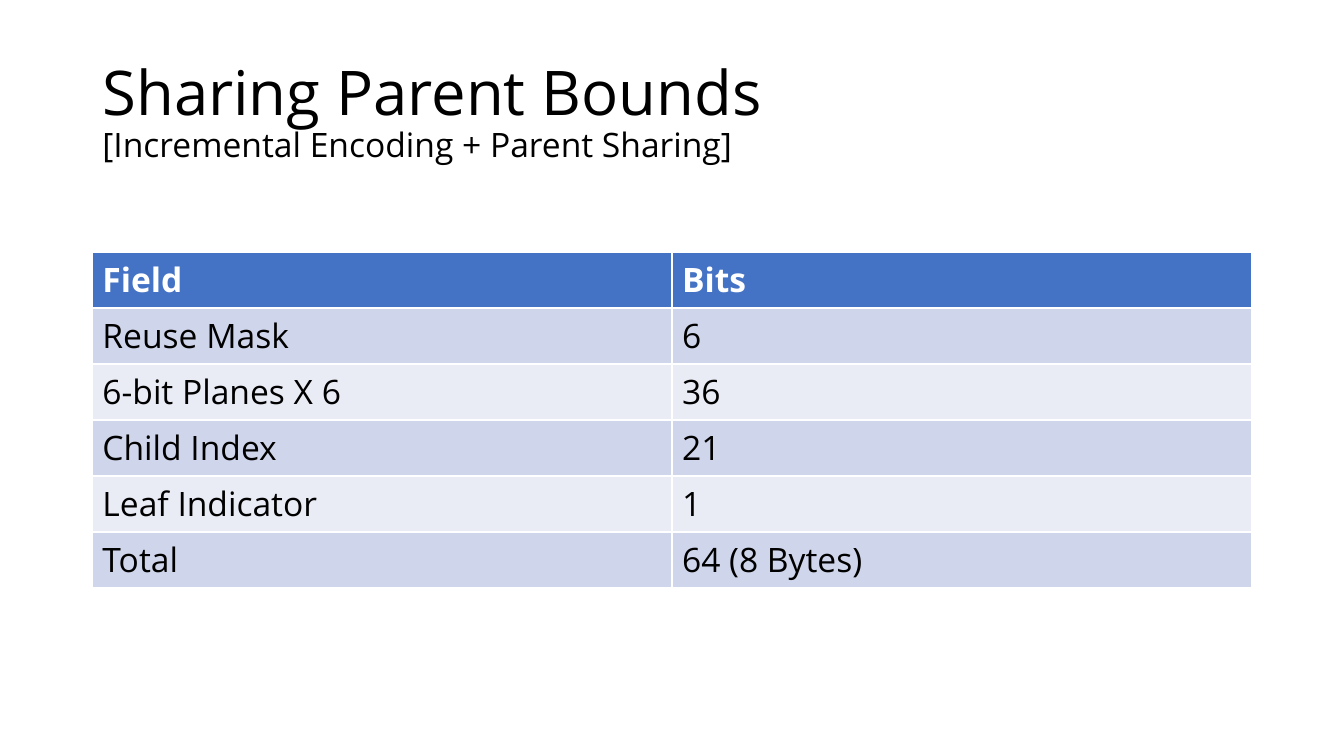
from pptx import Presentation
from pptx.dml.color import RGBColor
from pptx.enum.text import MSO_ANCHOR, PP_ALIGN
from pptx.util import Pt

LEFT = PP_ALIGN.LEFT
MIDDLE = MSO_ANCHOR.MIDDLE
BLACK = RGBColor(0x00, 0x00, 0x00)
WHITE = RGBColor(0xFF, 0xFF, 0xFF)
HEADER_BLUE = RGBColor(0x44, 0x72, 0xC4)
BAND_DARK = RGBColor(0xCF, 0xD5, 0xEA)
BAND_LIGHT = RGBColor(0xE9, 0xEB, 0xF5)

FIELDS = [
    ("Field", "Bits"),
    ("Reuse Mask", "6"),
    ("6-bit Planes X 6", "36"),
    ("Child Index", "21"),
    ("Leaf Indicator", "1"),
    ("Total", "64 (8 Bytes)"),
]
MARGIN = 66
CONTENT_WIDTH = 828
ROW_HEIGHT = 40


def add_text(paragraph, text, size=24, color=BLACK, bold=False):
    run = paragraph.add_run()
    run.text = text
    run.font.name = "Open Sans"
    run.font.size = Pt(size)
    run.font.color.rgb = color
    run.font.bold = bold


presentation = Presentation()
presentation.slide_width = Pt(960)
presentation.slide_height = Pt(540)
slide = presentation.slides.add_slide(presentation.slide_layouts[5])

title = slide.shapes.title
title.left, title.top = Pt(MARGIN), Pt(28.75)
title.width, title.height = Pt(CONTENT_WIDTH), Pt(104.4)
title.text_frame.vertical_anchor = MIDDLE
heading = title.text_frame.paragraphs[0]
heading.alignment = LEFT
heading.line_spacing = 0.9
add_text(heading, "Sharing Parent Bounds", size=44)
heading.add_line_break()
add_text(heading, "[Incremental Encoding + Parent Sharing]")

table = slide.shapes.add_table(
    len(FIELDS), 2, Pt(MARGIN), Pt(180), Pt(CONTENT_WIDTH), Pt(ROW_HEIGHT * len(FIELDS))
).table
for row_index, values in enumerate(FIELDS):
    is_header = row_index == 0
    band = BAND_DARK if row_index % 2 else BAND_LIGHT
    for column_index, value in enumerate(values):
        cell = table.cell(row_index, column_index)
        cell.fill.solid()
        cell.fill.fore_color.rgb = HEADER_BLUE if is_header else band
        add_text(
            cell.text_frame.paragraphs[0],
            value,
            color=WHITE if is_header else BLACK,
            bold=is_header,
        )

presentation.save("out.pptx")
